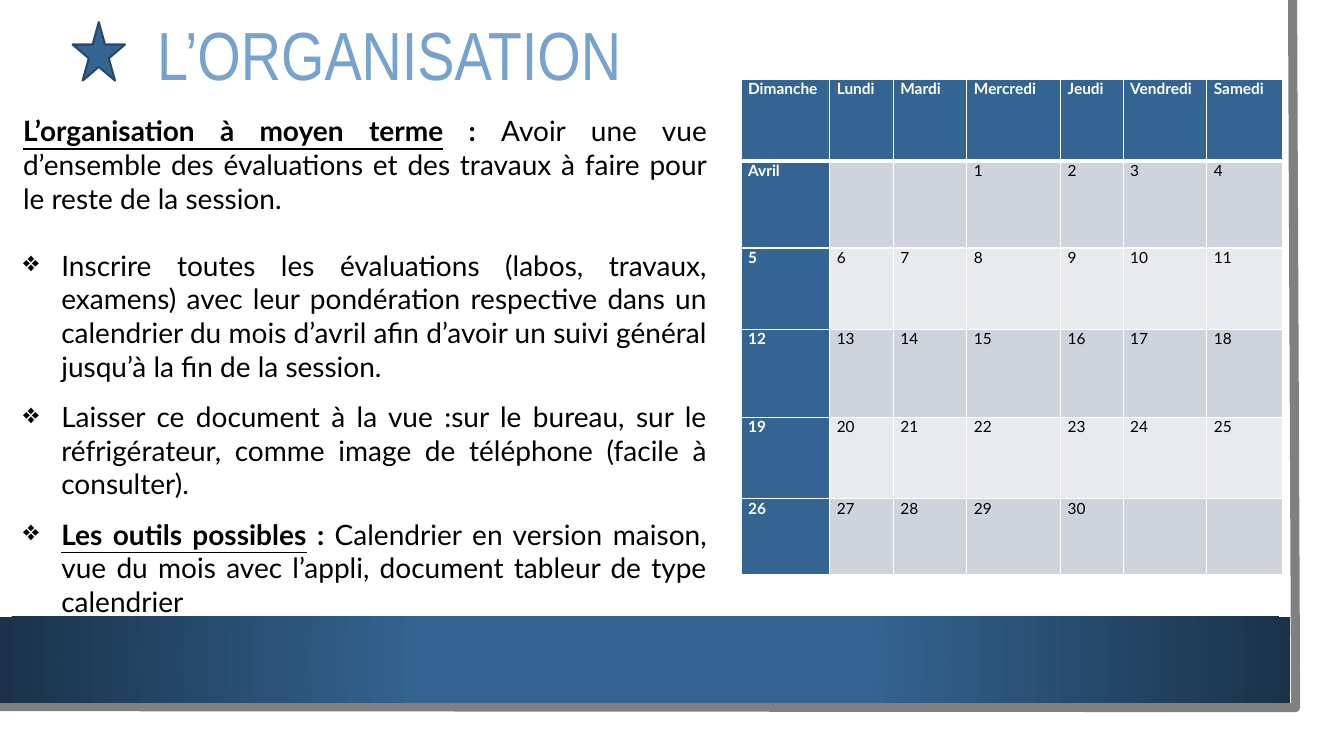
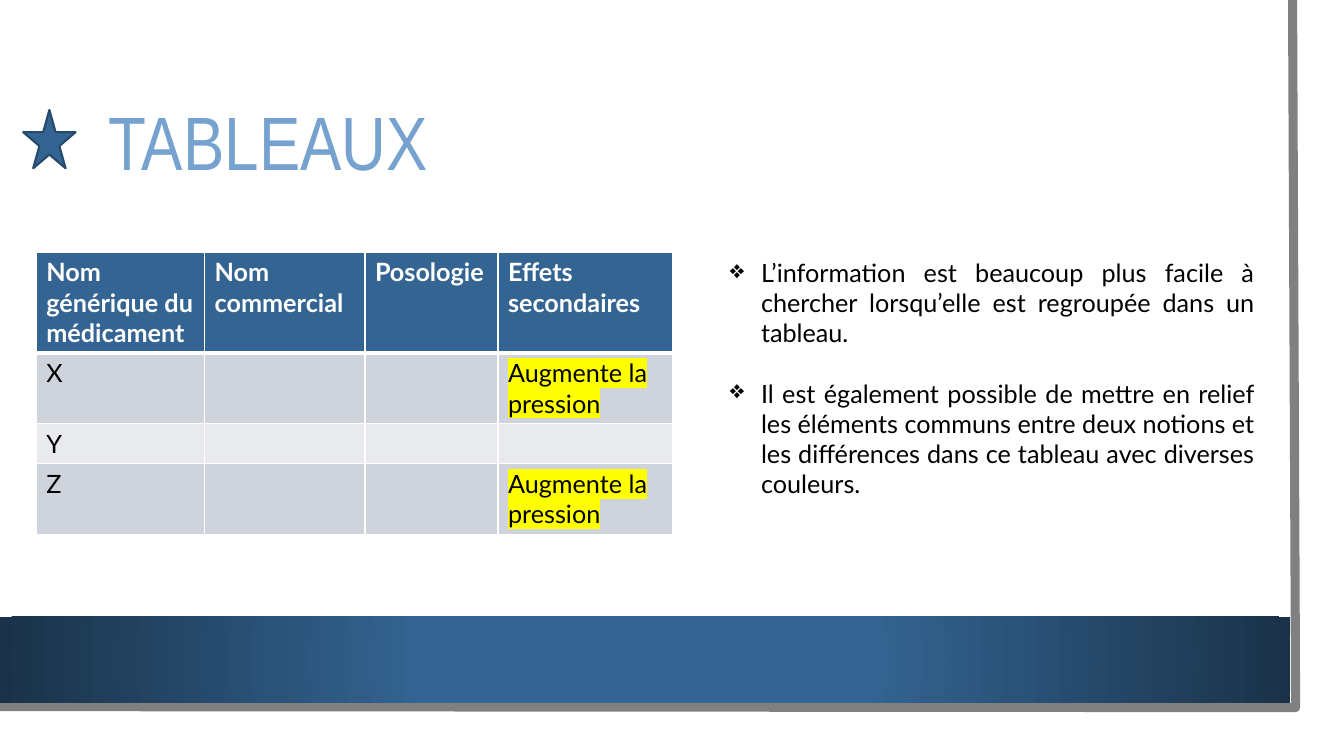
from pptx import Presentation
from pptx.dml.color import RGBColor
from pptx.enum.shapes import MSO_SHAPE
from pptx.enum.text import MSO_ANCHOR, PP_ALIGN
from pptx.oxml import parse_xml
from pptx.oxml.ns import nsdecls
from pptx.util import Emu, Pt

PX = 9144  # 100 px to the inch
RECTANGLE, STAR = MSO_SHAPE.RECTANGLE, MSO_SHAPE.STAR_5_POINT
MIDDLE, JUSTIFY = MSO_ANCHOR.MIDDLE, PP_ALIGN.JUSTIFY

# Shared style
WHITE, BLACK, GREY = "FFFFFF", "000000", "808080"
BLUE, DARK_BLUE, STAR_EDGE, TITLE_BLUE = "346492", "1A3249", "264A6C", "75A2CE"
ROW_TINTS = ["E8EAEE", "CED3DC"]  # even rows, odd rows
HIGHLIGHT = "FFFF00"
TITLE_FONT, BODY_FONT = "Arial Narrow", "Lato"


def colour(hex_code):
    return RGBColor.from_string(hex_code)


def px(*lengths):
    return [Emu(length * PX) for length in lengths]


# Content: body paragraphs are (bulleted, space before, runs), runs are (text, bold, underlined)
days = ["Avril", "", "", *range(1, 31), "", ""]
weeks = [days[start:start + 7] for start in range(0, len(days), 7)]

slides = [
    {
        "title": "L’ORGANISATION", "title_box": (146, 29, 1090, 58), "title_size": 48.6,
        "star": (72, 22),
        "table_at": (735, 79), "columns": [88, 63, 73, 93, 62, 83, 75],
        "rows": [81, 86, 81, 87, 81, 75], "table_size": 11, "margins": (7, 0),
        "blue_first_column": True, "highlighted": "",
        "cells": [["Dimanche", "Lundi", "Mardi", "Mercredi", "Jeudi", "Vendredi", "Samedi"],
                  *weeks],
        "body_box": (13, 108, 698, 515), "body_size": 20, "indent": 38,
        "body": [
            (False, 0, [
                ("L’organisation à moyen terme", True, True), (" : ", True, False),
                ("Avoir une vue d’ensemble des évaluations et des travaux à faire pour le "
                 "reste de la session.", False, False)]),
            (True, 24, [
                ("Inscrire toutes les évaluations (labos, travaux, examens) avec leur "
                 "pondération respective dans un calendrier du mois d’avril afin d’avoir un "
                 "suivi général jusqu’à la fin de la session.", False, False)]),
            (True, 12, [
                ("Laisser ce document à la vue :sur le bureau, sur le réfrigérateur, comme "
                 "image de téléphone (facile à consulter).", False, False)]),
            (True, 12, [
                ("Les outils possibles", True, True), (" : ", True, False),
                ("Calendrier en version maison, vue du mois avec l’appli, document tableur "
                 "de type calendrier", False, False)]),
        ],
    },
    {
        "title": "TABLEAUX", "title_box": (98, 82, 1137, 126), "title_size": 54,
        "star": (23, 109),
        "table_at": (36, 250), "columns": [167, 159, 132, 173],
        "rows": [100, 70, 40, 70], "table_size": 18, "margins": (10, 5),
        "blue_first_column": False, "highlighted": "Augmente la pression",
        "cells": [["Nom générique du médicament", "Nom commercial", "Posologie",
                   "Effets secondaires"],
                  ["X", "", "", "Augmente la pression"],
                  ["Y", "", "", ""],
                  ["Z", "", "", "Augmente la pression"]],
        "body_box": (714, 250, 540, 252), "body_size": 18, "indent": 31,
        "body": [
            (True, 0, [
                ("L’information est beaucoup plus facile à chercher lorsqu’elle est "
                 "regroupée dans un tableau.", False, False)]),
            (True, 21.6, [
                ("Il est également possible de mettre en relief les éléments communs entre "
                 "deux notions et les différences dans ce tableau avec diverses couleurs.",
                 False, False)]),
        ],
    },
]

presentation = Presentation()
presentation.slide_width, presentation.slide_height = px(1333, 750)

for content in slides:
    slide = presentation.slides.add_slide(presentation.slide_layouts[6])
    shapes = slide.shapes

    # White panel with its grey edge
    panel = shapes.add_shape(RECTANGLE, *px(0, 0, 1310, 727))
    panel.shadow.inherit = False
    panel.fill.solid()
    panel.fill.fore_color.rgb = colour(WHITE)
    panel.line.fill.background()

    outline = shapes.build_freeform(1282, 0, scale=PX)
    outline.add_line_segments([(1285, 702), (-3, 701)], close=False)
    edge = outline.convert_to_shape()
    edge.shadow.inherit = False
    edge.fill.background()
    edge.line.color.rgb = colour(GREY)
    edge.line.width = Pt(6.5)

    # Bottom band with a radial gradient
    band = shapes.add_shape(RECTANGLE, *px(0, 612, 1280, 85))
    band.shadow.inherit = False
    band.line.fill.background()
    band._element.spPr.insert(2, parse_xml(
        f'<a:gradFill {nsdecls("a")} rotWithShape="1"><a:gsLst>'
        f'<a:gs pos="34000"><a:srgbClr val="{BLUE}"/></a:gs>'
        f'<a:gs pos="100000"><a:srgbClr val="{DARK_BLUE}"/></a:gs></a:gsLst>'
        '<a:path path="circle"><a:fillToRect l="50000" t="50000" r="50000" b="50000"/></a:path>'
        '</a:gradFill>'))

    # Title and star
    title_frame = shapes.add_textbox(*px(*content["title_box"])).text_frame
    title_frame.word_wrap = True
    title_frame.vertical_anchor = MIDDLE
    paragraph = title_frame.paragraphs[0]
    paragraph.text = content["title"]
    paragraph.line_spacing = 0.9
    paragraph.font.name = TITLE_FONT
    paragraph.font.size = Pt(content["title_size"])
    paragraph.font.color.rgb = colour(TITLE_BLUE)

    star = shapes.add_shape(STAR, *px(*content["star"], 52, 58))
    star.shadow.inherit = False
    star.fill.solid()
    star.fill.fore_color.rgb = colour(BLUE)
    star.line.color.rgb = colour(STAR_EDGE)
    star.line.width = Pt(1.5)

    # Table
    columns, rows = content["columns"], content["rows"]
    table = shapes.add_table(len(rows), len(columns), *px(
        *content["table_at"], sum(columns), sum(rows))).table
    for column, width in zip(table.columns, px(*columns)):
        column.width = width
    for row, height in zip(table.rows, px(*rows)):
        row.height = height
    for row_index, texts in enumerate(content["cells"]):
        for column_index, text in enumerate(texts):
            cell = table.cell(row_index, column_index)
            is_heading = row_index == 0 or (content["blue_first_column"] and column_index == 0)
            side, top = px(*content["margins"])
            cell.margin_left = cell.margin_right = side
            cell.margin_top = cell.margin_bottom = top

            # White borders, thicker under the header row
            widths = {"L": 1, "R": 1, "T": 3 if row_index == 1 else 1,
                      "B": 3 if row_index == 0 else 1}
            for border, width in widths.items():
                cell._tc.get_or_add_tcPr().append(parse_xml(
                    f'<a:ln{border} {nsdecls("a")} w="{Pt(width)}"><a:solidFill>'
                    f'<a:srgbClr val="{WHITE}"/></a:solidFill></a:ln{border}>'))
            cell.fill.solid()
            cell.fill.fore_color.rgb = colour(BLUE if is_heading else ROW_TINTS[row_index % 2])

            paragraph = cell.text_frame.paragraphs[0]
            paragraph.font.name = BODY_FONT
            paragraph.font.size = Pt(content["table_size"])
            paragraph.font.bold = is_heading
            paragraph.font.color.rgb = colour(WHITE if is_heading else BLACK)
            if text != "":
                run = paragraph.add_run()
                run.text = str(text)
                if text == content["highlighted"]:
                    run._r.get_or_add_rPr().append(parse_xml(
                        f'<a:highlight {nsdecls("a")}><a:srgbClr val="{HIGHLIGHT}"/>'
                        '</a:highlight>'))

    # Body text
    body_frame = shapes.add_textbox(*px(*content["body_box"])).text_frame
    body_frame.word_wrap = True
    for index, (bulleted, space_before, runs) in enumerate(content["body"]):
        paragraph = body_frame.add_paragraph() if index else body_frame.paragraphs[0]
        paragraph.alignment = JUSTIFY
        if index:
            paragraph.space_before = Pt(space_before)
        if bulleted:
            properties = paragraph._p.get_or_add_pPr()
            indent = content["indent"] * PX
            properties.set("marL", str(indent))
            properties.set("indent", str(-indent))
            properties.append(parse_xml(f'<a:buChar {nsdecls("a")} char="❖"/>'))
        paragraph.font.name = BODY_FONT
        paragraph.font.size = Pt(content["body_size"])
        paragraph.font.color.rgb = colour(BLACK)
        for text, bold, underlined in runs:
            run = paragraph.add_run()
            run.text = text
            if bold:
                run.font.bold = True
            if underlined:
                run.font.underline = True

presentation.save("out.pptx")
